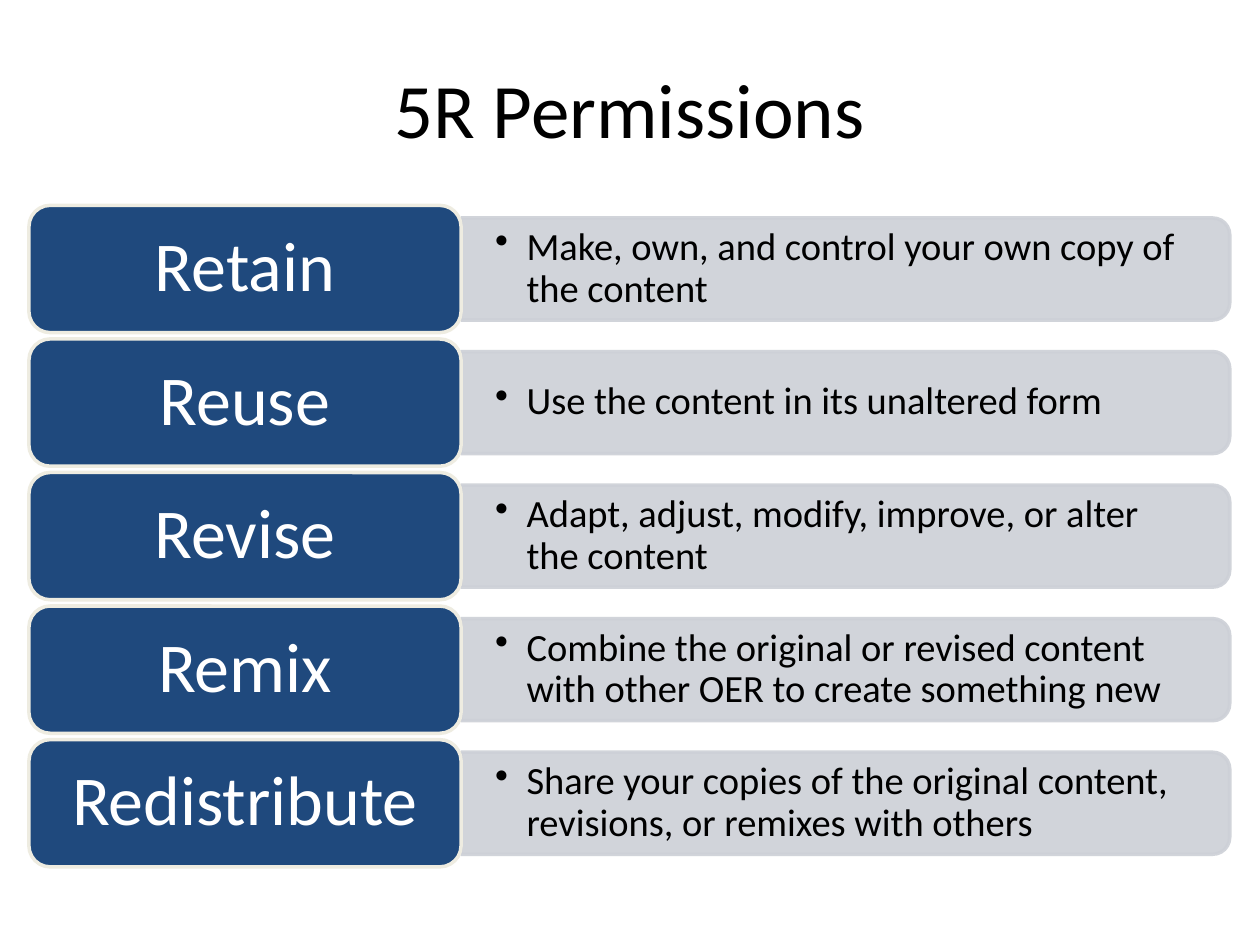
from lxml import etree
from pptx import Presentation
from pptx.dml.color import RGBColor
from pptx.enum.shapes import MSO_SHAPE
from pptx.enum.text import MSO_ANCHOR, PP_ALIGN
from pptx.oxml.ns import qn
from pptx.util import Inches, Pt

ROUNDED = MSO_SHAPE.ROUNDED_RECTANGLE
ROUNDED_TOP = MSO_SHAPE.ROUND_2_SAME_RECTANGLE
MIDDLE = MSO_ANCHOR.MIDDLE
CENTER, LEFT = PP_ALIGN.CENTER, PP_ALIGN.LEFT

NAVY = RGBColor(0x1F, 0x49, 0x7D)
CREAM = RGBColor(0xEE, 0xEC, 0xE1)
GREY = RGBColor(0xCD, 0xD0, 0xD7)
WHITE = RGBColor(0xFF, 0xFF, 0xFF)
BLACK = RGBColor(0, 0, 0)

TITLE = "5R Permissions"
PERMISSIONS = [
    ("Retain", "Make, own, and control your own copy of the content"),
    ("Reuse", "Use the content in its unaltered form"),
    ("Revise", "Adapt, adjust, modify, improve, or alter the content"),
    ("Remix", "Combine the original or revised content with other OER to create something new"),
    ("Redistribute", "Share your copies of the original content, revisions, or remixes with others"),
]

# Grid, in inches
LEFT_EDGE, TOP_EDGE = 0.23, 1.63
LABEL_WIDTH, LABEL_HEIGHT = 3.43, 1.01
PANEL_WIDTH, PANEL_HEIGHT = 6.1, 0.81
TEXT_WIDTH, TEXT_HEIGHT = 6.06, 0.73
ROW_GAP = 0.05
ROW_PITCH = LABEL_HEIGHT + ROW_GAP
PANEL_LEFT = LEFT_EDGE + LABEL_WIDTH


def write_text(shape, text, size, color, alignment, margins=(0.1, 0.05), spacing=0.9):
    """Fill the shape with one paragraph; margins are (sides, top and bottom)."""
    frame = shape.text_frame
    side, edge = (Inches(margin) for margin in margins)
    frame_format = {
        "word_wrap": True, "vertical_anchor": MIDDLE,
        "margin_left": side, "margin_right": side,
        "margin_top": edge, "margin_bottom": edge,
    }
    for name, value in frame_format.items():
        setattr(frame, name, value)
    paragraph = frame.paragraphs[0]
    paragraph.text = text
    paragraph.alignment = alignment
    paragraph.line_spacing = spacing
    font = paragraph.runs[0].font
    for name, value in {"name": "Calibri", "size": Pt(size), "bold": False}.items():
        setattr(font, name, value)
    font.color.rgb = color
    return paragraph


def add_box(slide, preset, box, fill, line):
    shape = slide.shapes.add_shape(preset, *(Inches(length) for length in box))
    shape.shadow.inherit = False
    shape.fill.solid()
    shape.fill.fore_color.rgb = fill
    shape.line.color.rgb = line
    shape.line.width = Pt(2)
    return shape


def add_bullet(paragraph):
    properties = paragraph._p.get_or_add_pPr()
    properties.set("marL", str(Inches(0.25)))
    properties.set("indent", str(-Inches(0.25)))
    etree.SubElement(properties, qn("a:buChar")).set("char", "•")


def add_panel(slide, middle, text):
    # The preset rounds its top corners, so it is turned to round the right end.
    left = PANEL_LEFT + (PANEL_WIDTH - PANEL_HEIGHT) / 2
    panel = add_box(slide, ROUNDED_TOP,
                    (left, middle - PANEL_WIDTH / 2, PANEL_HEIGHT, PANEL_WIDTH), GREY, GREY)
    panel.rotation = 90
    for color in panel._element.spPr.iter(qn("a:srgbClr")):
        etree.SubElement(color, qn("a:alpha")).set("val", "90000")
    box = (PANEL_LEFT, middle - TEXT_HEIGHT / 2, TEXT_WIDTH, TEXT_HEIGHT)
    text_box = slide.shapes.add_textbox(*(Inches(length) for length in box))
    add_bullet(write_text(text_box, text, 22, BLACK, LEFT, (0.27, 0.14)))


def add_label(slide, middle, text):
    box = (LEFT_EDGE, middle - LABEL_HEIGHT / 2, LABEL_WIDTH, LABEL_HEIGHT)
    label = add_box(slide, ROUNDED, box, NAVY, CREAM)
    write_text(label, text, 40, WHITE, CENTER, (0.17, 0.08))


def main():
    presentation = Presentation()
    presentation.slide_width, presentation.slide_height = Inches(10), Inches(7.5)
    slide = presentation.slides.add_slide(presentation.slide_layouts[5])

    title = slide.shapes.title
    title_box = {"left": 0.75, "top": 0.2, "width": 8.5, "height": 1.31}
    for name, value in title_box.items():
        setattr(title, name, Inches(value))
    write_text(title, TITLE, 44, BLACK, CENTER, spacing=1.0)

    for row, (name, meaning) in enumerate(PERMISSIONS):
        middle = TOP_EDGE + LABEL_HEIGHT / 2 + row * ROW_PITCH
        add_panel(slide, middle, meaning)
        add_label(slide, middle, name)

    presentation.save("out.pptx")


if __name__ == "__main__":
    main()
